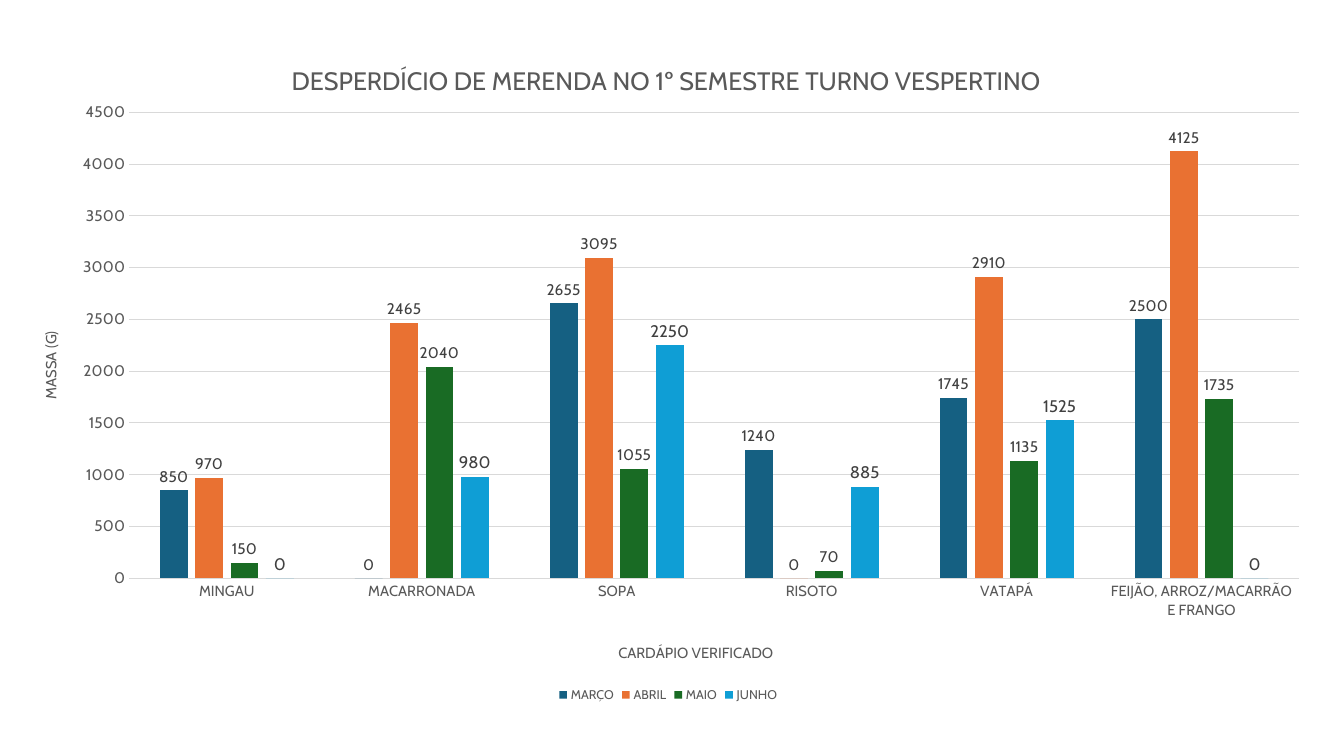
from dataclasses import dataclass

from lxml import etree
from pptx import Presentation
from pptx.chart.data import CategoryChartData
from pptx.dml.color import RGBColor
from pptx.enum.chart import XL_CHART_TYPE, XL_LABEL_POSITION, XL_LEGEND_POSITION, XL_TICK_MARK
from pptx.oxml.ns import qn
from pptx.util import Cm, Pt

COLUMNS = XL_CHART_TYPE.COLUMN_CLUSTERED
OUTSIDE_END = XL_LABEL_POSITION.OUTSIDE_END
BOTTOM = XL_LEGEND_POSITION.BOTTOM
NO_TICK = XL_TICK_MARK.NONE


@dataclass(frozen=True)
class Theme:
    font: str = "Cabin"
    text: str = "595959"
    label: str = "404040"
    line: str = "D9D9D9"
    title_size: float = 18
    axis_title_size: float = 10.5
    category_size: float = 10.5
    value_size: float = 11
    legend_size: float = 9


THEME = Theme()
MENU = ["MINGAU", "MACARRONADA", "SOPA", "RISOTO", "VATAPÁ", "FEIJÃO, ARROZ/MACARRÃO E FRANGO"]
# Month, waste in grams per menu item, colour, label size
MONTHS = [
    ("MARÇO", (850, 0, 2655, 1240, 1745, 2500), "156082", 11),
    ("ABRIL", (970, 2465, 3095, 0, 2910, 4125), "E97132", 11),
    ("MAIO", (150, 2040, 1055, 70, 1135, 1735), "196B24", 11),
    ("JUNHO", (0, 980, 2250, 885, 1525, 0), "0F9ED5", 12),
]


def style_font(font, size, color=THEME.text):
    font.name = THEME.font
    font.size = Pt(size)
    font.bold = False
    font.color.rgb = RGBColor.from_string(color)


def style_line(line):
    line.color.rgb = RGBColor.from_string(THEME.line)
    line.width = Pt(0.75)


def set_layout(element, index, **settings):
    """Give a chart part a manual layout, as fractions of the chart."""
    for old_layout in element.findall(qn("c:layout")):
        element.remove(old_layout)
    layout = etree.Element(qn("c:layout"))
    manual = etree.SubElement(layout, qn("c:manualLayout"))
    for name, value in settings.items():
        etree.SubElement(manual, qn(f"c:{name}")).set("val", str(value))
    element.insert(index, layout)


def add_title(owner, text, size, left, top):
    """Title a chart or an axis, with its corner at a fraction of the chart."""
    title = owner.chart_title if hasattr(owner, "chart_title") else owner.axis_title
    paragraph = title.text_frame.paragraphs[0]
    paragraph.text = text
    style_font(paragraph.font, size)
    set_layout(title._element, 1, xMode="edge", yMode="edge", x=left, y=top)


def style_axes(chart):
    category_axis, value_axis = chart.category_axis, chart.value_axis
    for axis, size in ((category_axis, THEME.category_size), (value_axis, THEME.value_size)):
        axis.major_tick_mark = axis.minor_tick_mark = NO_TICK
        style_font(axis.tick_labels.font, size)
    style_line(category_axis.format.line)
    value_axis.format.line.fill.background()
    value_axis.minimum_scale, value_axis.maximum_scale = 0, 4500
    value_axis.major_unit = 500
    style_line(value_axis.major_gridlines.format.line)


def style_columns(plot):
    plot.gap_width = 219
    plot.overlap = -27
    plot.vary_by_categories = False
    for series, (_, _, color, label_size) in zip(plot.series, MONTHS):
        series.format.fill.solid()
        series.format.fill.fore_color.rgb = RGBColor.from_string(color)
        labels = series.data_labels
        labels.show_value = True
        labels.position = OUTSIDE_END
        style_font(labels.font, label_size, THEME.label)


def add_waste_chart(slide, left, top, width, height):
    data = CategoryChartData()
    data.categories = MENU
    for month, grams, _, _ in MONTHS:
        data.add_series(month, grams)
    chart = slide.shapes.add_chart(COLUMNS, left, top, width, height, data).chart
    style_font(chart.font, 10, "000000")

    add_title(chart, "DESPERDÍCIO DE MERENDA NO 1º SEMESTRE TURNO VESPERTINO",
              THEME.title_size, 0.21, 0.04)
    add_title(chart.category_axis, "CARDÁPIO VERIFICADO", THEME.axis_title_size, 0.46, 0.9)
    add_title(chart.value_axis, "MASSA (G)", THEME.axis_title_size, 0.02, 0.44)
    style_axes(chart)
    style_columns(chart.plots[0])
    chart.has_legend = True
    chart.legend.position = BOTTOM
    chart.legend.include_in_layout = False
    style_font(chart.legend.font, THEME.legend_size)
    plot_area = chart._chartSpace.chart.plotArea
    set_layout(plot_area, 0, layoutTarget="inner", xMode="edge", yMode="edge",
               x=0.09, y=0.12, w=0.89, h=0.69)


def main():
    presentation = Presentation()
    presentation.slide_width, presentation.slide_height = Cm(33.87), Cm(19.05)
    slide = presentation.slides.add_slide(presentation.slide_layouts[6])
    add_waste_chart(slide, Cm(0.28), Cm(0.79), Cm(33.12), Cm(17.02))
    presentation.save("out.pptx")


if __name__ == "__main__":
    main()
